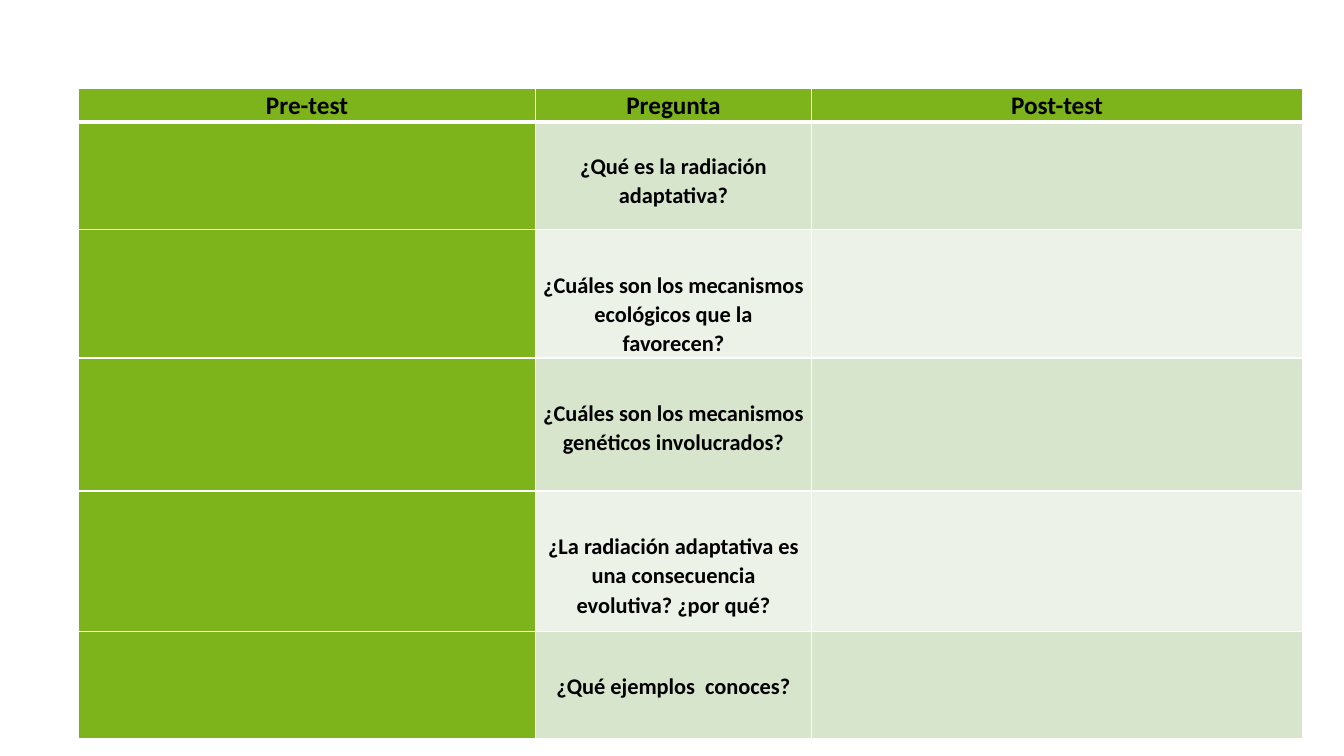
from lxml.etree import SubElement
from pptx import Presentation
from pptx.dml.color import RGBColor
from pptx.enum.text import PP_ALIGN
from pptx.oxml.ns import qn
from pptx.util import Inches, Pt

HEADERS = ["Pre-test", "Pregunta", "Post-test"]
QUESTIONS = [
    "¿Qué es la radiación adaptativa?",
    "¿Cuáles son los mecanismos ecológicos que la favorecen?",
    "¿Cuáles son los mecanismos genéticos involucrados?",
    "¿La radiación adaptativa es una consecuencia evolutiva? ¿por qué?",
    "¿Qué ejemplos  conoces?",
]
COLORS = {"green": "7DB41B", "dark band": "D7E5CD", "light band": "ECF2E8",
          "border": "FFFFFF", "text": "000000"}
FONT = "Calibri"
LEFT, TOP = 0.78, 0.88
COLUMN_WIDTHS = [4.53, 2.74, 4.87]
ROW_HEIGHTS = [0.33, 1.07, 1.27, 1.32, 1.39, 1.07]
SIDE_MARGIN = 0.06
FIRST_QUESTION_GAP, QUESTION_GAP = 0.29, 0.4


def fill_color(row, column):
    if row == 0 or column == 0:
        return COLORS["green"]
    return COLORS["dark band" if row % 2 else "light band"]


def border_width(row, side):
    """The line between the header and the first question is thicker."""
    return 3 if (row, side) in [(0, "B"), (1, "T")] else 1


def add_borders(cell, row):
    properties = cell._tc.get_or_add_tcPr()
    for side in "LRTB":
        line = SubElement(properties, qn(f"a:ln{side}"), w=str(Pt(border_width(row, side))))
        fill = SubElement(line, qn("a:solidFill"))
        SubElement(fill, qn("a:srgbClr"), val=COLORS["border"])


def write_cell(cell, text, size, top_gap):
    cell.margin_left = cell.margin_right = Inches(SIDE_MARGIN)
    cell.margin_top, cell.margin_bottom = Inches(top_gap), 0
    cell.text_frame.text = text
    paragraph = cell.text_frame.paragraphs[0]
    paragraph.alignment = PP_ALIGN.CENTER
    paragraph.line_spacing = 1.07
    font = paragraph.runs[0].font
    font.name, font.size, font.bold = FONT, Pt(size), True
    font.color.rgb = RGBColor.from_string(COLORS["text"])


presentation = Presentation()
presentation.slide_width, presentation.slide_height = Inches(13.33), Inches(7.5)
slide = presentation.slides.add_slide(presentation.slide_layouts[6])
table = slide.shapes.add_table(
    len(ROW_HEIGHTS), len(COLUMN_WIDTHS), Inches(LEFT), Inches(TOP),
    Inches(sum(COLUMN_WIDTHS)), Inches(sum(ROW_HEIGHTS))).table
table.first_col = True
for table_column, width in zip(table.columns, COLUMN_WIDTHS):
    table_column.width = Inches(width)

for row, height in enumerate(ROW_HEIGHTS):
    table.rows[row].height = Inches(height)
    for column in range(len(COLUMN_WIDTHS)):
        cell = table.cell(row, column)
        add_borders(cell, row)
        cell.fill.solid()
        cell.fill.fore_color.rgb = RGBColor.from_string(fill_color(row, column))

for column, header in enumerate(HEADERS):
    write_cell(table.cell(0, column), header, 18, 0)
for row, question in enumerate(QUESTIONS, start=1):
    gap = FIRST_QUESTION_GAP if row == 1 else QUESTION_GAP
    write_cell(table.cell(row, 1), question, 16, gap)

presentation.save("out.pptx")
